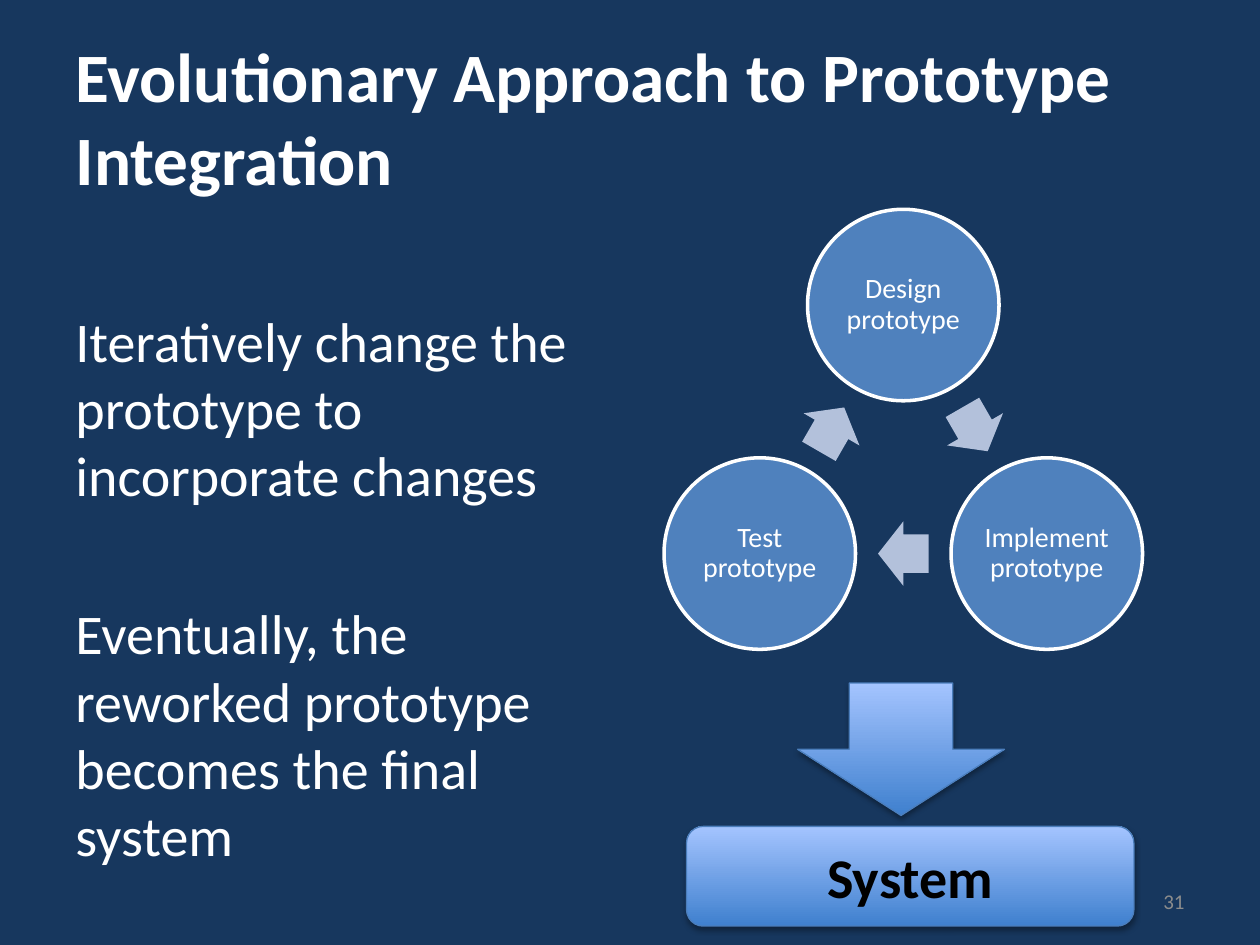
import math
from dataclasses import dataclass

import pptx
import pptx.dml.color
import pptx.enum.shapes
import pptx.enum.text
import pptx.oxml
import pptx.oxml.ns
import pptx.util
from pptx.shapes.autoshape import Shape
from pptx.text.text import TextFrame

Cm = pptx.util.Cm
Pt = pptx.util.Pt
RGBColor = pptx.dml.color.RGBColor
MSO_SHAPE = pptx.enum.shapes.MSO_SHAPE
PP_ALIGN = pptx.enum.text.PP_ALIGN
MSO_ANCHOR = pptx.enum.text.MSO_ANCHOR

NAVY = RGBColor(0x17, 0x37, 0x5E)
WHITE = RGBColor(0xFF, 0xFF, 0xFF)
BLACK = RGBColor(0, 0, 0)
BLUE = RGBColor(0x4F, 0x81, 0xBD)
PALE_BLUE = RGBColor(0xB3, 0xC1, 0xDB)
GRADIENT_BOTTOM = RGBColor(0x3F, 0x80, 0xCE)
GRADIENT_TOP = RGBColor(0xA4, 0xC4, 0xFF)
EDGE_BLUE = RGBColor(0x4B, 0x7E, 0xBC)
GREY = RGBColor(0x8C, 0x8C, 0x8C)
FONT = "Calibri"

# Cycle geometry, in cm
CYCLE_X, CYCLE_Y, CYCLE_RADIUS = 18.21, 9.49, 3.34
STAGE_SIZE = 3.86
ARROW_WIDTH, ARROW_HEIGHT = 1.02, 1.3

SHADOW_XML = (
    f'<a:effectLst {pptx.oxml.ns.nsdecls("a")}>'
    '<a:outerShdw blurRad="40000" dist="23000" dir="5400000" rotWithShape="0">'
    '<a:srgbClr val="000000"><a:alpha val="35000"/></a:srgbClr>'
    '</a:outerShdw></a:effectLst>'
)


@dataclass
class Box:
    """Place and size in cm."""
    left: float
    top: float
    width: float
    height: float

    def lengths(self) -> tuple:
        return Cm(self.left), Cm(self.top), Cm(self.width), Cm(self.height)


def centred_box(angle: float, radius: float, width: float, height: float) -> Box:
    """Box centred on a point around the cycle, angle in degrees clockwise."""
    x = CYCLE_X + radius * math.cos(math.radians(angle))
    y = CYCLE_Y + radius * math.sin(math.radians(angle))
    return Box(x - width / 2, y - height / 2, width, height)


def write(frame: TextFrame, lines: list[str], size: float, color: RGBColor,
          align=PP_ALIGN.LEFT, anchor=MSO_ANCHOR.MIDDLE, bold: bool = False) -> None:
    frame.word_wrap = True
    frame.vertical_anchor = anchor
    frame.text = "\n".join(lines)
    for paragraph in frame.paragraphs:
        paragraph.alignment = align
        paragraph.font.name = FONT
        paragraph.font.size = Pt(size)
        paragraph.font.bold = bold
        paragraph.font.color.rgb = color


def add_stage(shapes, label: str, angle: float) -> None:
    box = centred_box(angle, CYCLE_RADIUS, STAGE_SIZE, STAGE_SIZE)
    stage = shapes.add_shape(MSO_SHAPE.OVAL, *box.lengths())
    stage.shadow.inherit = False
    stage.fill.solid()
    stage.fill.fore_color.rgb = BLUE
    stage.line.color.rgb = WHITE
    stage.line.width = Pt(2)
    frame = stage.text_frame
    frame.margin_left = frame.margin_right = Cm(0.05)
    frame.margin_top = frame.margin_bottom = Cm(0.05)
    write(frame, [label], 16, WHITE, PP_ALIGN.CENTER)
    frame.paragraphs[0].line_spacing = 0.9


def add_cycle_arrow(shapes, angle: float) -> None:
    # Halfway between neighbouring stages, pointing clockwise
    box = centred_box(angle, CYCLE_RADIUS / 2, ARROW_WIDTH, ARROW_HEIGHT)
    arrow = shapes.add_shape(MSO_SHAPE.RIGHT_ARROW, *box.lengths())
    arrow.shadow.inherit = False
    arrow.adjustments[0] = 0.6
    arrow.adjustments[1] = 0.5
    arrow.rotation = (angle + 90) % 360
    arrow.fill.solid()
    arrow.fill.fore_color.rgb = PALE_BLUE
    arrow.line.fill.background()


def add_glossy(shapes, kind, box: Box) -> Shape:
    glossy = shapes.add_shape(kind, *box.lengths())
    glossy.fill.gradient()
    glossy.fill.gradient_angle = 90
    for stop, color in zip(glossy.fill.gradient_stops, (GRADIENT_BOTTOM, GRADIENT_TOP)):
        stop.color.rgb = color
    glossy.line.color.rgb = EDGE_BLUE
    glossy.line.width = Pt(0.75)
    glossy.element.spPr.append(pptx.oxml.parse_xml(SHADOW_XML))
    return glossy


def main() -> None:
    deck = pptx.Presentation()
    deck.slide_width, deck.slide_height = Cm(25.4), Cm(19.05)
    slide = deck.slides.add_slide(deck.slide_layouts[5])
    shapes = slide.shapes
    slide.background.fill.solid()
    slide.background.fill.fore_color.rgb = NAVY

    # Title
    title = shapes.title
    title.left, title.top, title.width, title.height = Box(1.27, 0.76, 22.86, 3.18).lengths()
    write(title.text_frame, ["Evolutionary Approach to Prototype Integration"],
          39.6, WHITE, bold=True)

    # Prototype cycle
    for i, label in enumerate(("Design prototype", "Implement prototype", "Test prototype")):
        add_stage(shapes, label, -90 + 120 * i)
        add_cycle_arrow(shapes, -30 + 120 * i)

    # Slide number
    number = shapes.add_textbox(*Box(18.21, 17.65, 5.92, 1.02).lengths())
    write(number.text_frame, ["31"], 12, GREY, PP_ALIGN.RIGHT)

    # Resulting system
    add_glossy(shapes, MSO_SHAPE.DOWN_ARROW, Box(16.08, 13.77, 4.17, 2.67))
    system = add_glossy(shapes, MSO_SHAPE.ROUNDED_RECTANGLE, Box(13.84, 16.66, 9.02, 2.01))
    write(system.text_frame, ["System"], 32, BLACK, PP_ALIGN.CENTER, bold=True)

    # Explanation
    explanation = shapes.add_textbox(*Box(1.27, 6.05, 11.56, 12.62).lengths())
    write(explanation.text_frame,
          ["Iteratively change the prototype to incorporate changes",
           "Eventually, the reworked prototype becomes the final system"],
          32, WHITE, anchor=MSO_ANCHOR.TOP)
    explanation.text_frame.paragraphs[1].space_before = Pt(52)

    deck.save("out.pptx")


if __name__ == "__main__":
    main()
